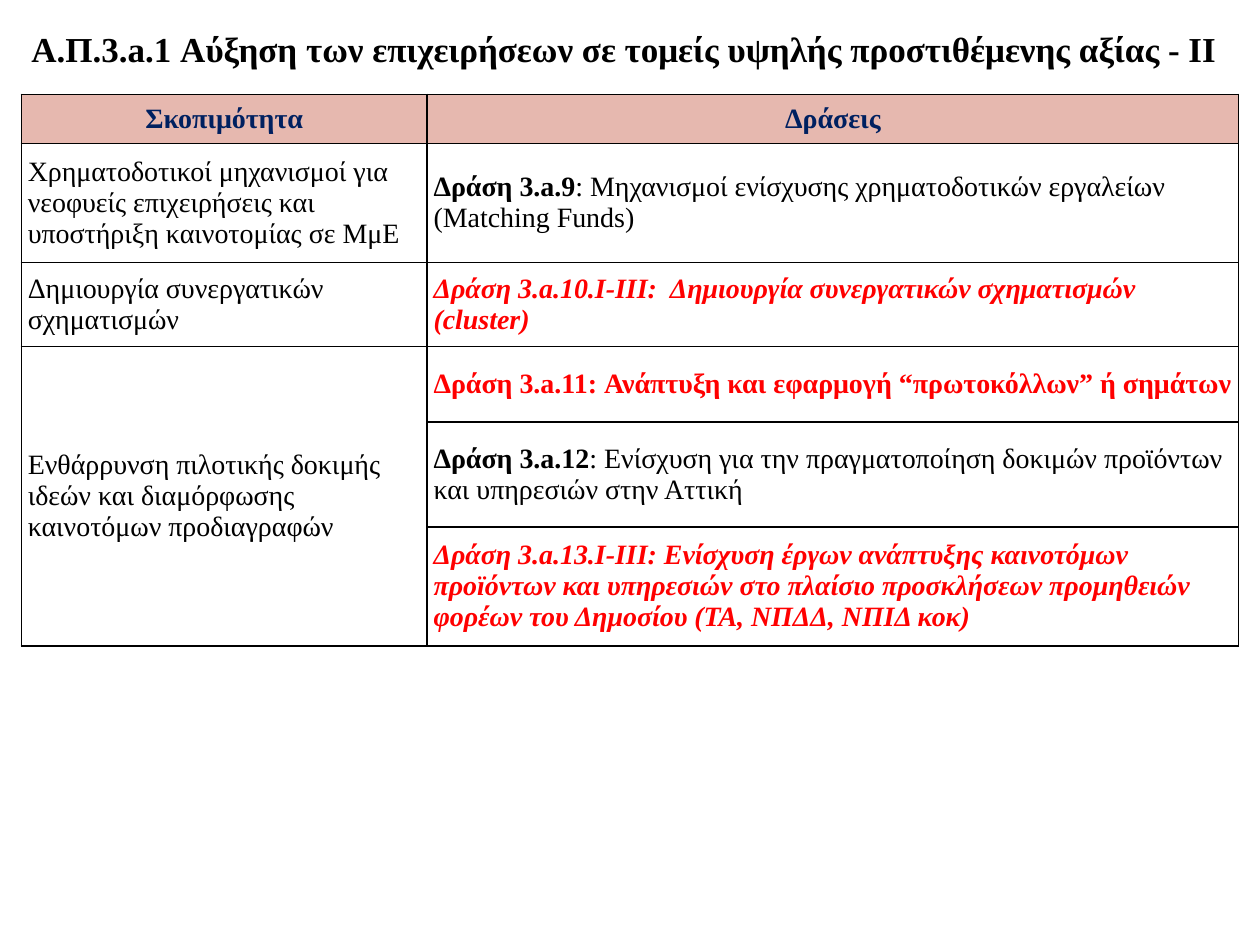
from dataclasses import dataclass

from lxml import etree
from pptx import Presentation
from pptx.dml.color import RGBColor
from pptx.enum import text
from pptx.oxml import ns
from pptx.util import Cm, Pt


@dataclass(frozen=True)
class Theme:
    font: str = "Times New Roman"
    title_size: int = 20
    body_size: int = 16
    border_width: int = 1
    black: str = "000000"
    navy: str = "002060"
    red: str = "FF0000"
    header_fill: str = "E6B8AF"


THEME = Theme()


@dataclass(frozen=True)
class Span:
    text: str
    color: str = THEME.black
    bold: bool = False
    italic: bool = False
    size: int = THEME.body_size


@dataclass(frozen=True)
class Row:
    height: float
    purpose: tuple[Span, ...]
    action: tuple[Span, ...]


def header(label: str) -> tuple[Span, ...]:
    return (Span(label, THEME.navy, bold=True),)


def plain(label: str) -> tuple[Span, ...]:
    return (Span(label),)


def numbered(code: str, description: str) -> tuple[Span, ...]:
    return Span(code, bold=True), Span(description)


def highlighted(label: str, italic: bool = True) -> tuple[Span, ...]:
    return (Span(label, THEME.red, bold=True, italic=italic),)


TITLE = Span(
    "Α.Π.3.a.1 Αύξηση των επιχειρήσεων σε τομείς υψηλής προστιθέμενης αξίας - ΙΙ",
    bold=True,
    size=THEME.title_size,
)
COLUMN_WIDTHS = (8.18, 16.36)
ROWS = (
    Row(0.99, header("Σκοπιμότητα"), header("Δράσεις")),
    Row(
        2.4,
        plain("Χρηματοδοτικοί μηχανισμοί για νεοφυείς επιχειρήσεις και υποστήριξη καινοτομίας σε ΜμΕ"),
        numbered("Δράση 3.a.9", ": Μηχανισμοί ενίσχυσης χρηματοδοτικών εργαλείων (Matching Funds)"),
    ),
    Row(
        1.69,
        plain("Δημιουργία συνεργατικών σχηματισμών"),
        highlighted("Δράση 3.a.10.Ι-ΙΙΙ:  Δημιουργία συνεργατικών σχηματισμών (cluster)"),
    ),
    Row(
        1.53,
        plain("Ενθάρρυνση πιλοτικής δοκιμής ιδεών και διαμόρφωσης καινοτόμων προδιαγραφών"),
        highlighted("Δράση 3.a.11: Ανάπτυξη και εφαρμογή “πρωτοκόλλων” ή σημάτων", italic=False),
    ),
    Row(
        2.11,
        (),
        numbered("Δράση 3.a.12", ": Ενίσχυση για την πραγματοποίηση δοκιμών προϊόντων και υπηρεσιών στην Αττική"),
    ),
    Row(
        2.4,
        (),
        highlighted(
            "Δράση 3.a.13.Ι-ΙΙΙ: Ενίσχυση έργων ανάπτυξης καινοτόμων προϊόντων και υπηρεσιών "
            "στο πλαίσιο προσκλήσεων προμηθειών φορέων του Δημοσίου (ΤΑ, ΝΠΔΔ, ΝΠΙΔ κοκ)"
        ),
    ),
)


def write(p, spans: tuple[Span, ...], align: text.PP_ALIGN) -> None:
    p.alignment = align
    for span in spans:
        r = p.add_run()
        r.text = span.text
        r.font.name = THEME.font
        r.font.size = Pt(span.size)
        r.font.bold = span.bold
        r.font.italic = span.italic
        r.font.color.rgb = RGBColor.from_string(span.color)


def add_borders(cell) -> None:
    tc_pr = cell._tc.get_or_add_tcPr()
    for index, side in enumerate(("a:lnL", "a:lnR", "a:lnT", "a:lnB")):
        ln = etree.Element(ns.qn(side), w=str(Pt(THEME.border_width)))
        fill = etree.SubElement(ln, ns.qn("a:solidFill"))
        etree.SubElement(fill, ns.qn("a:srgbClr"), val=THEME.black)
        tc_pr.insert(index, ln)


def format_cell(cell, spans: tuple[Span, ...], is_header: bool) -> None:
    cell.margin_left = cell.margin_right = Cm(0.13)
    cell.margin_top = cell.margin_bottom = Cm(0.13)
    cell.vertical_anchor = text.MSO_ANCHOR.MIDDLE
    if is_header:
        cell.fill.solid()
        cell.fill.fore_color.rgb = RGBColor.from_string(THEME.header_fill)
    else:
        cell.fill.background()
    add_borders(cell)
    align = text.PP_ALIGN.CENTER if is_header else text.PP_ALIGN.LEFT
    write(cell.text_frame.paragraphs[0], spans, align)


def add_title(s) -> None:
    sp = s.shapes.title
    sp.left, sp.top, sp.width, sp.height = Cm(0.2), Cm(0.43), Cm(24.77), Cm(1.12)
    tf = sp.text_frame
    tf.word_wrap = True
    tf.auto_size = text.MSO_AUTO_SIZE.SHAPE_TO_FIT_TEXT
    tf.vertical_anchor = text.MSO_ANCHOR.TOP
    write(tf.paragraphs[0], (TITLE,), text.PP_ALIGN.CENTER)


def add_actions_table(s) -> None:
    width = Cm(sum(COLUMN_WIDTHS))
    height = Cm(sum(row.height for row in ROWS))
    table = s.shapes.add_table(
        len(ROWS), len(COLUMN_WIDTHS), Cm(0.43), Cm(1.9), width, height
    ).table
    table.horz_banding = False
    for column, column_width in zip(table.columns, COLUMN_WIDTHS):
        column.width = Cm(column_width)
    for i, row in enumerate(ROWS):
        table.rows[i].height = Cm(row.height)
        for j, spans in enumerate((row.purpose, row.action)):
            format_cell(table.cell(i, j), spans, is_header=i == 0)
    table.cell(3, 0).merge(table.cell(5, 0))


def main() -> None:
    prs = Presentation()
    prs.slide_width, prs.slide_height = Cm(25.4), Cm(19.05)
    s = prs.slides.add_slide(prs.slide_layouts[5])
    add_title(s)
    add_actions_table(s)
    prs.save("out.pptx")


if __name__ == "__main__":
    main()
